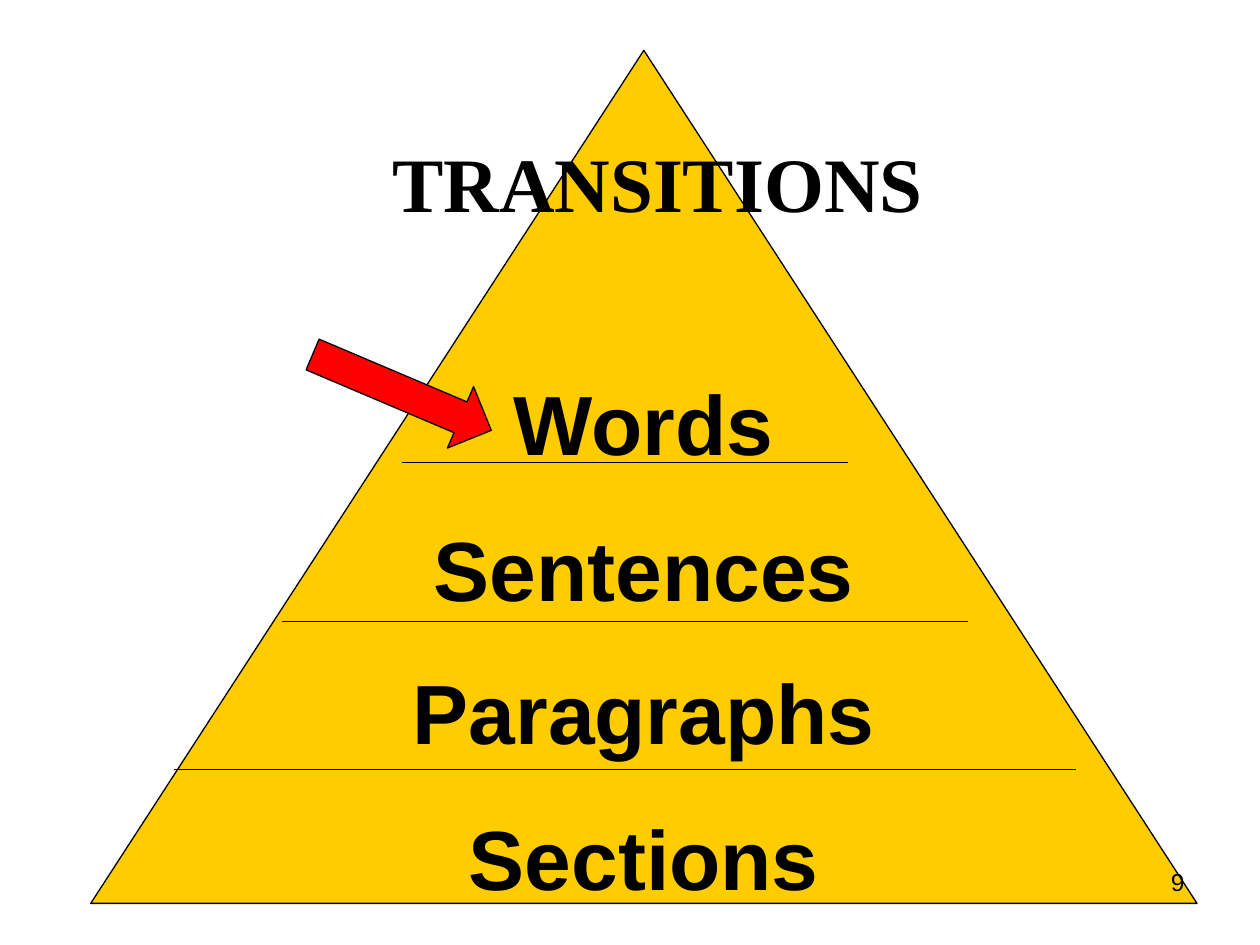
from lxml.etree import SubElement
from pptx import Presentation
from pptx.dml.color import RGBColor
from pptx.enum.shapes import MSO_CONNECTOR, MSO_SHAPE
from pptx.enum.text import MSO_ANCHOR, PP_ALIGN
from pptx.oxml.ns import qn
from pptx.util import Inches, Pt

LEVELS = [("Words", 0), ("Sentences", 26), ("Paragraphs", 24), ("Sections", 26)]
RULES = [(3.27, 1.77), (4.53, 2.72), (5.71, 3.58)]


def color(code):
    """Turn a hex string into a colour."""
    return RGBColor.from_string(code)


def style(para, size, font="Arial", bold=False, align=PP_ALIGN.CENTER):
    """Format a paragraph and its runs."""
    para.alignment = align
    for run in para.runs:
        run.font.size = Pt(size)
        run.font.name = font
        run.font.bold = bold
        run.font.color.rgb = color("000000")


def add_solid(slide, kind, box, fill):
    """Add a filled, thinly outlined shape."""
    shape = slide.shapes.add_shape(kind, *map(Inches, box))
    shape.shadow.inherit = False
    shape.fill.solid()
    shape.fill.fore_color.rgb = color(fill)
    shape.line.color.rgb = color("000000")
    shape.line.width = Pt(0.75)
    return shape


def add_rule(slide, left, right, y):
    """Add a thin horizontal line."""
    line = slide.shapes.add_connector(
        MSO_CONNECTOR.STRAIGHT, Inches(left), Inches(y), Inches(right), Inches(y))
    line.line.color.rgb = color("000000")
    line.line.width = Pt(0.75)
    SubElement(line.element.spPr, qn("a:effectLst"))


def add_pyramid(slide, box):
    """Add the triangle with its levels, dividing lines and pointer."""
    left, top = box[:2]
    frame = add_solid(slide, MSO_SHAPE.ISOSCELES_TRIANGLE, box, "FFCC00").text_frame
    frame.word_wrap = True
    frame.vertical_anchor = MSO_ANCHOR.MIDDLE
    frame.margin_bottom = Inches(0.85)
    frame.text = "\n".join(name for name, gap in LEVELS)
    for para, (name, gap) in zip(frame.paragraphs, LEVELS):
        style(para, 48, bold=True)
        para.space_before = Pt(gap)
    middle = left + 4.24
    for drop, half in RULES:
        add_rule(slide, middle - half, middle + half, top + drop)
    arrow = add_solid(slide, MSO_SHAPE.RIGHT_ARROW,
                      (left + 1.7, top + 2.45, 1.54, 0.53), "FF0000")
    arrow.rotation = 23


def place_title(slide, box, text):
    """Move the title in front of the pyramid and format it."""
    title = slide.shapes.title
    title.left, title.top, title.width, title.height = map(Inches, box)
    title.element.getparent().append(title.element)
    title.text_frame.text = text
    title.text_frame.vertical_anchor = MSO_ANCHOR.MIDDLE
    style(title.text_frame.paragraphs[0], 44, "Times New Roman", True)


def add_number(slide, box, text):
    """Add the page number."""
    frame = slide.shapes.add_textbox(*map(Inches, box)).text_frame
    frame.word_wrap = True
    frame.text = text
    style(frame.paragraphs[0], 14, align=PP_ALIGN.RIGHT)


def main():
    """Build and save the slide."""
    deck = Presentation()
    deck.slide_width, deck.slide_height = Inches(10), Inches(7.5)
    slide = deck.slides.add_slide(deck.slide_layouts[5])
    add_pyramid(slide, (0.72, 0.4, 8.78, 6.77))
    place_title(slide, (0.72, 0.82, 9, 1.25), "TRANSITIONS")
    add_number(slide, (7.17, 6.83, 2.33, 0.52), "9")
    deck.save("out.pptx")


if __name__ == "__main__":
    main()
